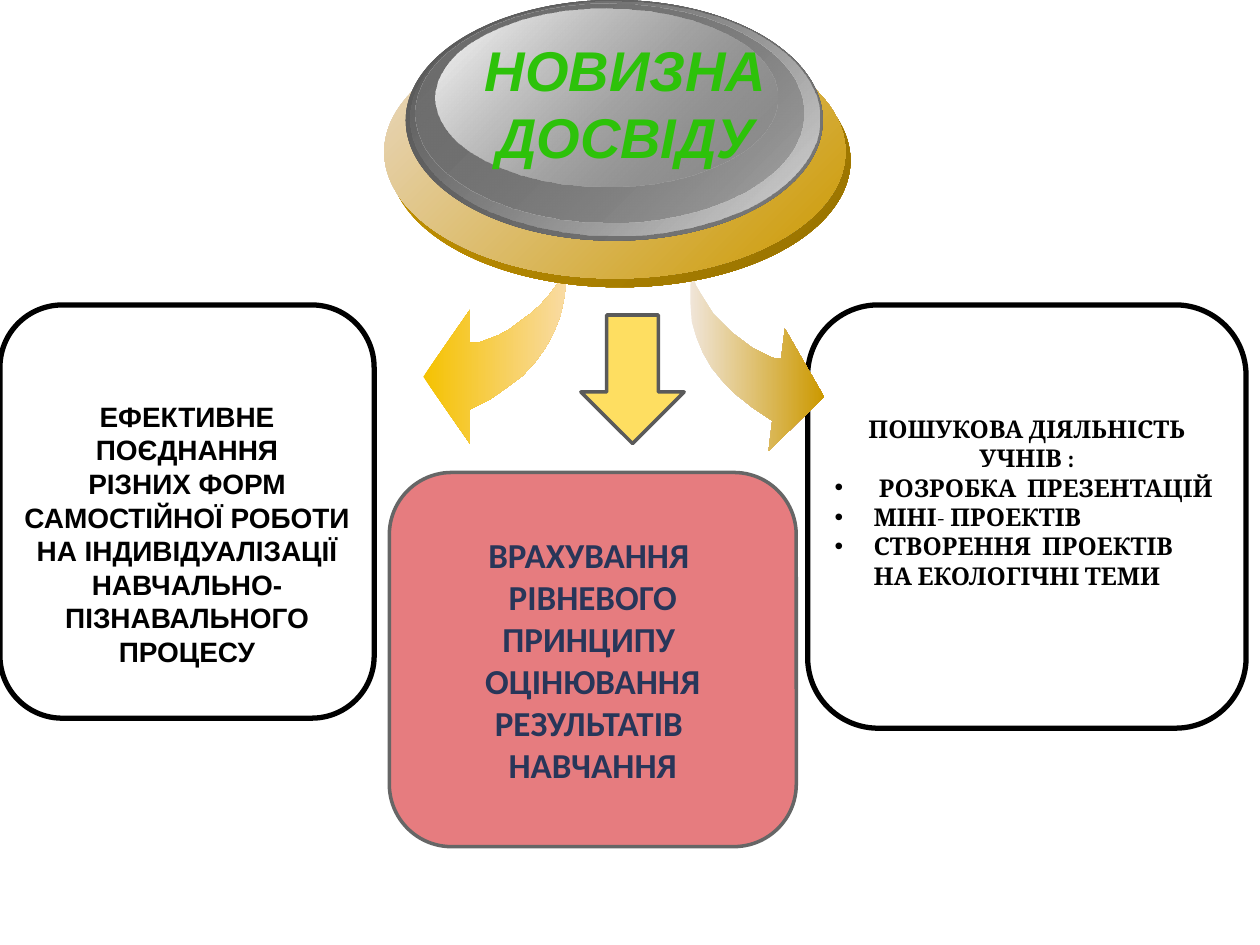
from lxml import etree
from pptx import Presentation
from pptx.dml.color import RGBColor
from pptx.enum.shapes import MSO_SHAPE
from pptx.enum.text import MSO_ANCHOR, MSO_AUTO_SIZE, PP_ALIGN
from pptx.oxml.ns import qn
from pptx.util import Inches, Pt

ROUND, OVAL, UP = MSO_SHAPE.ROUNDED_RECTANGLE, MSO_SHAPE.OVAL, MSO_SHAPE.UP_ARROW
TOP, MIDDLE = MSO_ANCHOR.TOP, MSO_ANCHOR.MIDDLE
LEFT, CENTER = PP_ALIGN.LEFT, PP_ALIGN.CENTER
BLACK = RGBColor(0x00, 0x00, 0x00)
GREEN = RGBColor(0x2D, 0xC2, 0x0A)
NAVY = RGBColor(0x28, 0x36, 0x59)
ROSE = RGBColor(0xE6, 0x7C, 0x7F)
YELLOW = RGBColor(0xFE, 0xDE, 0x61)
GRAY = RGBColor(0x66, 0x66, 0x66)
DARK = RGBColor(0x5A, 0x5A, 0x5A)
AMBER = RGBColor(0xF5, 0xC2, 0x01)
CREAM = RGBColor(0xF9, 0xDB, 0xA4)
GOLD = RGBColor(0xCC, 0x99, 0x00)
BROWN = RGBColor(0x95, 0x70, 0x00)
SAND = RGBColor(0xEA, 0xDA, 0xC6)
PALE = RGBColor(0xF0, 0xE5, 0xD8)
COAL = RGBColor(0x57, 0x57, 0x57)
SLATE = RGBColor(0x6E, 0x6E, 0x6E)
STEEL = RGBColor(0x7A, 0x7A, 0x7A)
SILVER = RGBColor(0xDC, 0xDC, 0xDC)
WHITE = RGBColor(0xFF, 0xFF, 0xFF)

prs = Presentation()
prs.slide_width, prs.slide_height = Inches(10), Inches(7.5)
slide = prs.slides.add_slide(prs.slide_layouts[5])
shapes = slide.shapes


def shade(shape, angle, *stops):
    """Fill with a gradient of (colour, opacity in percent) and no line."""
    shape.shadow.inherit = False
    shape.line.fill.background()
    shape.fill.gradient()
    grad = shape._element.spPr.find(qn("a:gradFill"))
    grad.find(qn("a:lin")).set("ang", str(angle * 60000))
    marks = grad.find(qn("a:gsLst"))
    for mark in list(marks):
        marks.remove(mark)
    for place, (color, alpha) in zip((0, 100000), stops):
        mark = etree.SubElement(marks, qn("a:gs"), pos=str(place))
        tone = etree.SubElement(mark, qn("a:srgbClr"), val=str(color))
        if alpha < 100:
            etree.SubElement(tone, qn("a:alpha"), val=str(alpha * 1000))


def write(shape, lines, size, face, color, anchor=TOP, italic=False):
    """Write paragraphs given as (alignment, bullet, runs of (text, bold))."""
    frame = shape.text_frame
    frame.word_wrap = True
    frame.auto_size = MSO_AUTO_SIZE.NONE
    frame.vertical_anchor = anchor
    for i, (align, bullet, runs) in enumerate(lines):
        para = frame.paragraphs[0] if i == 0 else frame.add_paragraph()
        para.alignment = align
        if align == LEFT:
            props = para._p.get_or_add_pPr()
            props.set("marL", str(Inches(0.31)))
            props.set("indent", str(Inches(-0.31 if bullet else 0)))
            if bullet:
                etree.SubElement(props, qn("a:buFont"), typeface="Arial")
                etree.SubElement(props, qn("a:buChar"), char="•")
        for text, bold in runs:
            run = para.add_run()
            run.text = text
            font = run.font
            font.size, font.name, font.bold, font.italic = Pt(size), face, bold, italic
            font.color.rgb = color


# Three rounded panels and the down arrow
panels = []
for kind, box, fill, line, width in (
    (ROUND, (6.41, 2.42, 3.48, 3.36), None, BLACK, 3),
    (ROUND, (0, 2.42, 2.97, 3.28), None, BLACK, 3),
    (ROUND, (3.09, 3.75, 3.23, 2.97), ROSE, GRAY, 2),
    (UP, (4.61, 2.5, 0.82, 1.02), YELLOW, DARK, 2),
):
    panel = shapes.add_shape(kind, *map(Inches, box))
    panel.shadow.inherit = False
    if fill is None:
        panel.fill.background()
    else:
        panel.fill.solid()
        panel.fill.fore_color.rgb = fill
    panel.line.color.rgb = line
    panel.line.width = Pt(width)
    panels.append(panel)
right, left, center, arrow = panels
arrow.rotation = 180

# Right panel text
frame = right.text_frame
frame.margin_left = frame.margin_right = Inches(0.05)
frame.margin_bottom = Inches(0.28)
write(right, [
    (CENTER, False, [("ПОШУКОВА ДІЯЛЬНІСТЬ", True)]),
    (CENTER, False, [("УЧНІВ :", True)]),
    (LEFT, True, [(" РОЗРОБКА  ПРЕЗЕНТАЦІЙ", True)]),
    (LEFT, True, [("МІНІ", True), ("- ", False), ("ПРОЕКТІВ", True)]),
    (LEFT, True, [("СТВОРЕННЯ  ПРОЕКТІВ", True)]),
    (LEFT, False, [("НА ЕКОЛОГІЧНІ ТЕМИ", True)]),
], 14, "Cambria", BLACK, MIDDLE)

# Left panel text
label = shapes.add_textbox(Inches(0), Inches(3.12), Inches(2.97), Inches(2.26))
write(label, [(CENTER, False, [(text, True)]) for text in (
    "ЕФЕКТИВНЕ ПОЄДНАННЯ",
    "РІЗНИХ ФОРМ САМОСТІЙНОЇ РОБОТИ НА ІНДИВІДУАЛІЗАЦІЇ",
    "НАВЧАЛЬНО-ПІЗНАВАЛЬНОГО ПРОЦЕСУ",
)], 16, "Arial", BLACK)

# Centre panel text
write(center, [(CENTER, False, [(text, True)]) for text in (
    "ВРАХУВАННЯ  РІВНЕВОГО ПРИНЦИПУ  ОЦІНЮВАННЯ",
    "РЕЗУЛЬТАТІВ  НАВЧАННЯ",
)], 20, "Calibri", NAVY, MIDDLE)

# Curved side arrows
for points, start, end in (
    ([(4.5, 2.03), (4.5, 2.2), (4.48, 2.35), (4.45, 2.5), (4.4, 2.63),
      (4.33, 2.76), (4.25, 2.87), (4.15, 2.98), (4.03, 3.07), (3.89, 3.17),
      (3.73, 3.25), (3.73, 3.52), (3.36, 2.99), (3.73, 2.46), (3.73, 2.72),
      (3.8, 2.72), (3.88, 2.69), (3.96, 2.66), (4.05, 2.61), (4.13, 2.55),
      (4.21, 2.49), (4.29, 2.42), (4.36, 2.34), (4.42, 2.26), (4.46, 2.18),
      (4.49, 2.11)], AMBER, CREAM),
    ([(5.5, 2.11), (5.48, 2.26), (5.48, 2.41), (5.49, 2.55), (5.53, 2.68),
      (5.58, 2.8), (5.65, 2.92), (5.74, 3.03), (5.84, 3.13), (5.98, 3.24),
      (6.13, 3.34), (6.1, 3.58), (6.54, 3.15), (6.23, 2.61), (6.2, 2.85),
      (6.13, 2.84), (6.05, 2.8), (5.97, 2.76), (5.89, 2.7), (5.81, 2.64),
      (5.74, 2.57), (5.66, 2.49), (5.61, 2.41), (5.56, 2.33), (5.52, 2.26),
      (5.5, 2.18)], PALE, GOLD),
):
    spots = [(Inches(x), Inches(y)) for x, y in points]
    path = shapes.build_freeform(*spots[0])
    path.add_line_segments(spots[1:], close=True)
    shade(path.convert_to_shape(), 0, (start, 100), (end, 100))

# Stacked ovals of the button
for box, start, end in (
    ((3.09, 0.27, 3.66, 2.01), (GOLD, 100), (BROWN, 100)),
    ((3.05, 0.2, 3.66, 2.01), (SAND, 100), (GOLD, 100)),
    ((3.22, 0, 3.31, 1.91), (COAL, 100), (STEEL, 100)),
    ((3.26, 0.01, 3.24, 1.86), (STEEL, 0), (SILVER, 100)),
    ((3.3, 0.03, 3.08, 1.74), (SLATE, 100), (STEEL, 48)),
    ((3.46, 0.07, 2.71, 1.41), (WHITE, 100), (STEEL, 38)),
):
    shade(shapes.add_shape(OVAL, *map(Inches, box)), 45, start, end)

# Title, brought in front of the button
title = shapes.title
title.left, title.top = Inches(3.52), Inches(0.23)
title.width, title.height = Inches(2.89), Inches(1.18)
write(title, [(CENTER, False, [(text, True)]) for text in ("НОВИЗНА", "ДОСВІДУ")],
      32, "Arial", GREEN, italic=True)
for para in title.text_frame.paragraphs:
    para.space_before = Pt(0)
shapes._spTree.append(title._element)

prs.save("out.pptx")
